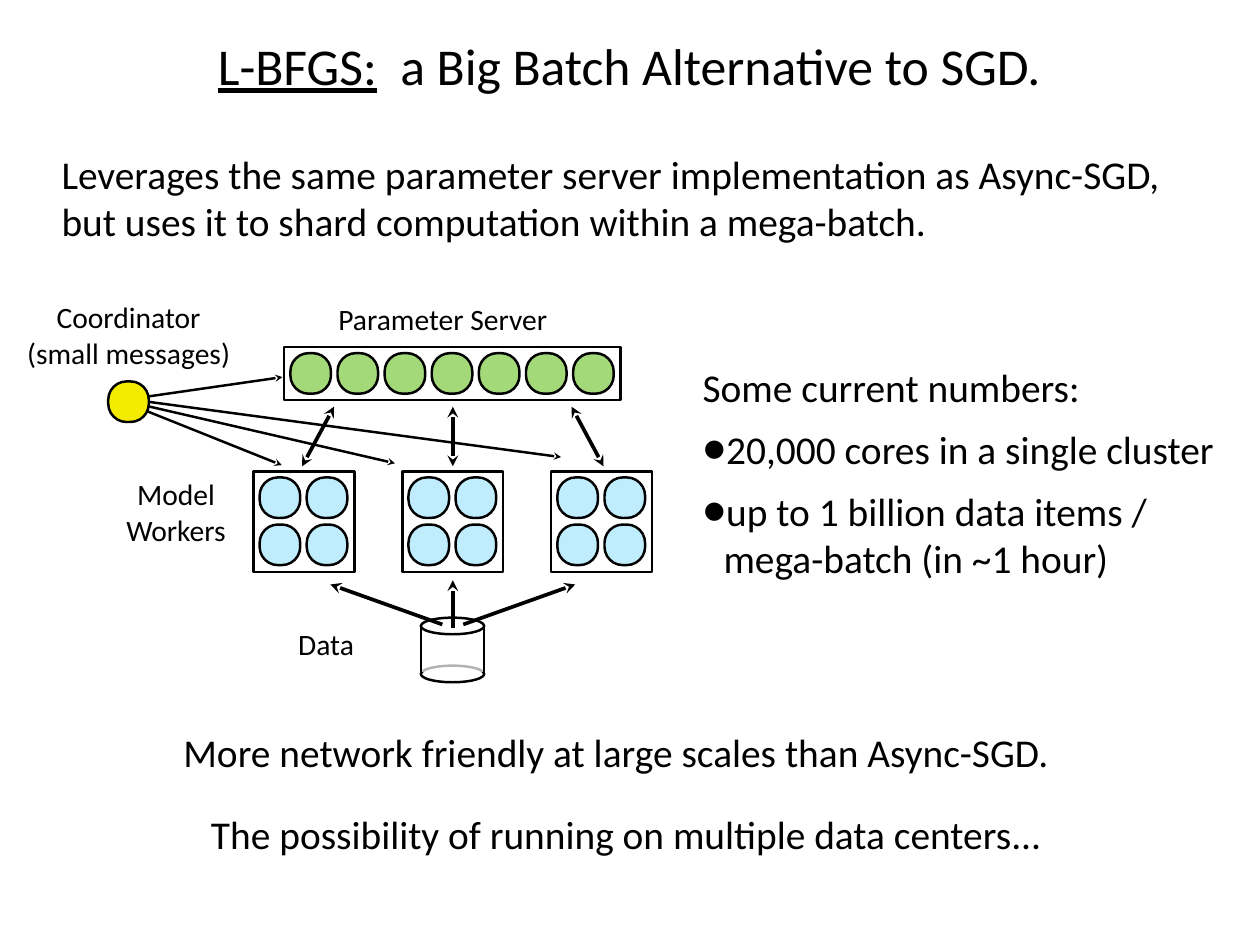
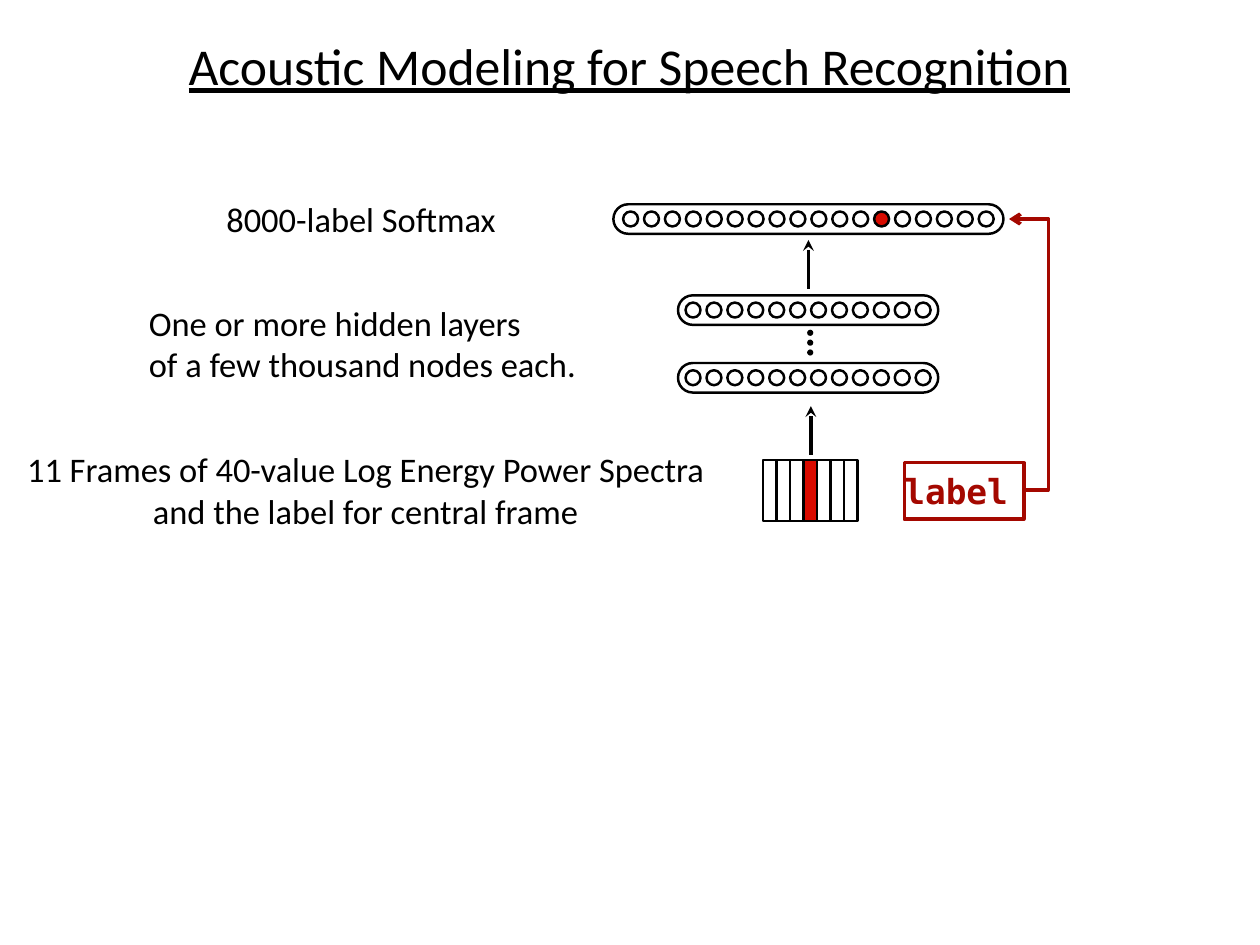
from dataclasses import dataclass
from itertools import product
from typing import NamedTuple, Optional, Sequence

from lxml.etree import SubElement
from pptx import Presentation
from pptx.dml.color import RGBColor
from pptx.enum.shapes import MSO_CONNECTOR, MSO_SHAPE
from pptx.enum.text import MSO_ANCHOR, MSO_AUTO_SIZE, PP_ALIGN
from pptx.oxml.ns import qn
from pptx.shapes.autoshape import Shape
from pptx.slide import Slide
from pptx.text.text import TextFrame
from pptx.util import Pt


@dataclass(frozen=True)
class Theme:
    font: str = "Calibri"
    code_font: str = "DejaVu Sans Mono"
    black: str = "000000"
    white: str = "FFFFFF"
    worker: str = "C0EDFE"
    server: str = "A3D979"
    coordinator: str = "F3EB00"
    active: str = "D90B00"
    label: str = "A40800"
    title_size: float = 42
    body_size: float = 32
    note_size: float = 28
    caption_size: float = 24
    thin: float = 2
    thick: float = 3


class Box(NamedTuple):
    left: float
    top: float
    width: float
    height: float


class Arrow(NamedTuple):
    start: tuple[float, float]
    end: tuple[float, float]
    width: float = 3
    head: Optional[str] = "stealth"
    tail: Optional[str] = None


class Caption(NamedTuple):
    box: Box
    lines: Sequence[str]
    size: float
    align: PP_ALIGN = PP_ALIGN.LEFT
    before: float = 0


class Layer(NamedTuple):
    box: Box
    nodes: int
    active: Optional[int] = None


THEME = Theme()
CELL = 33
CELL_PITCH = 38.3
CELL_INSET = 5
NODE = 12.2
NODE_PITCH = 17
CENTER = 368


def write_text(frame: TextFrame, lines: Sequence[str], *, size: float, font: str = THEME.font,
               color: str = THEME.black, align: PP_ALIGN = PP_ALIGN.LEFT, bold: bool = False,
               before: float = 0, underlined: str = "") -> None:
    frame.auto_size = MSO_AUTO_SIZE.NONE
    frame.word_wrap = True
    frame.vertical_anchor = MSO_ANCHOR.MIDDLE
    frame.margin_left = frame.margin_right = frame.margin_top = frame.margin_bottom = 0
    for index, line in enumerate(lines):
        paragraph = frame.paragraphs[0] if index == 0 else frame.add_paragraph()
        paragraph.alignment = align
        paragraph.space_before = Pt(before)
        for text, underline in ((underlined, True), (line, False)):
            if text:
                run = paragraph.add_run()
                run.text = text
                run.font.name = font
                run.font.size = Pt(size)
                run.font.bold = bold
                run.font.underline = underline
                run.font.color.rgb = RGBColor.from_string(color)


def place(shape: Shape, box: Box) -> None:
    shape.left, shape.top, shape.width, shape.height = map(Pt, box)


def add_title(slide: Slide, underlined: str, rest: str = "") -> None:
    title = slide.shapes.title
    place(title, Box(7, 24, 1009, 57))
    write_text(title.text_frame, [rest], size=THEME.title_size, align=PP_ALIGN.CENTER,
               underlined=underlined)


def add_caption(slide: Slide, caption: Caption) -> None:
    text_box = slide.shapes.add_textbox(*map(Pt, caption.box))
    write_text(text_box.text_frame, caption.lines, size=caption.size, align=caption.align,
               before=caption.before)


def style_line(shape: Shape, color: str, width: float) -> None:
    shape.line.color.rgb = RGBColor.from_string(color)
    shape.line.width = Pt(width)


def add_ends(shape: Shape, head: Optional[str], tail: Optional[str]) -> None:
    line = shape.line._get_or_add_ln()
    for tag, kind in (("a:headEnd", head), ("a:tailEnd", tail)):
        if kind:
            SubElement(line, qn(tag), type=kind)


def add_figure(slide: Slide, kind: MSO_SHAPE, box: Box, *, fill: Optional[str] = None,
               line: Optional[str] = THEME.black, width: float = THEME.thin,
               corner: Optional[float] = None, opacity: Optional[int] = None) -> Shape:
    shape = slide.shapes.add_shape(kind, *map(Pt, box))
    shape.shadow.inherit = False
    if corner is not None:
        shape.adjustments[0] = corner
    if fill:
        shape.fill.solid()
        shape.fill.fore_color.rgb = RGBColor.from_string(fill)
    else:
        shape.fill.background()
    if opacity is not None:
        color = shape._element.spPr.find(f".//{qn('a:srgbClr')}")
        SubElement(color, qn("a:alpha"), val=str(opacity * 1000))
    if line:
        style_line(shape, line, width)
    else:
        shape.line.fill.background()
    return shape


def add_arrow(slide: Slide, arrow: Arrow) -> None:
    connector = slide.shapes.add_connector(
        MSO_CONNECTOR.STRAIGHT, *map(Pt, (*arrow.start, *arrow.end)))
    style_line(connector, THEME.black, arrow.width)
    add_ends(connector, arrow.head, arrow.tail)
    SubElement(connector._element.spPr, qn("a:effectLst"))


def add_cell(slide: Slide, left: float, top: float, fill: str) -> None:
    add_figure(slide, MSO_SHAPE.ROUNDED_RECTANGLE, Box(left, top, CELL, CELL),
               fill=fill, corner=0.452)


def add_cell_grid(slide: Slide, box: Box, rows: int, columns: int, fill: str) -> None:
    for row, column in product(range(rows), range(columns)):
        add_cell(slide, box.left + CELL_INSET + column * CELL_PITCH,
                 box.top + CELL_INSET + row * CELL_PITCH, fill)
    add_figure(slide, MSO_SHAPE.RECTANGLE, box)


def add_numbers(slide: Slide) -> None:
    body = slide.placeholders[1]
    place(body, Box(571, 229, 430, 310))
    write_text(body.text_frame, [
        "Some current numbers:",
        "20,000 cores in a single cluster",
        "up to 1 billion data items / mega-batch (in ~1 hour)",
    ], size=THEME.body_size, before=12)
    for index, paragraph in enumerate(body.text_frame.paragraphs):
        properties = paragraph._p.get_or_add_pPr()
        indent = Pt(17) if index else 0
        properties.set("marL", str(indent))
        properties.set("indent", str(-indent))
        if index:
            SubElement(properties, qn("a:buSzPct"), val="171000")
            SubElement(properties, qn("a:buChar"), char="•")
        else:
            SubElement(properties, qn("a:buNone"))


def add_data_store(slide: Slide) -> None:
    left, width, rim = 342, 51.5, 13.5
    add_figure(slide, MSO_SHAPE.OVAL, Box(left, 541, width, rim))
    add_figure(slide, MSO_SHAPE.RECTANGLE, Box(left, 510, width, 36),
               fill=THEME.white, line=None, opacity=70)
    add_figure(slide, MSO_SHAPE.OVAL, Box(left, 502, width, rim))
    for side in (left, left + width):
        add_arrow(slide, Arrow((side, 509), (side, 548), THEME.thin, None))


def build_batch_slide(slide: Slide) -> None:
    add_title(slide, "L-BFGS:", "  a Big Batch Alternative to SGD.")
    add_numbers(slide)
    center = PP_ALIGN.CENTER
    captions = [
        Caption(Box(50, 96, 915, 129), [
            "Leverages the same parameter server implementation as Async-SGD, "
            "but uses it to shard computation within a mega-batch."],
            THEME.body_size, before=12),
        Caption(Box(149, 589, 730, 44),
                ["More network friendly at large scales than Async-SGD."],
                THEME.body_size, before=12),
        Caption(Box(171.5, 656, 700, 44),
                ["The possibility of running on multiple data centers..."],
                THEME.body_size, before=12),
        Caption(Box(275, 241, 190, 36), ["Parameter Server"], THEME.caption_size),
        Caption(Box(91, 384, 104, 64), ["Model", "Workers"], THEME.caption_size, center),
        Caption(Box(184, 505, 162, 36), ["Data"], THEME.caption_size, center),
        Caption(Box(14, 240, 181, 64), ["Coordinator", "(small messages)"],
                THEME.caption_size, center),
    ]
    for caption in captions:
        add_caption(slide, caption)

    for worker in range(3):
        add_cell_grid(slide, Box(206 + worker * 121, 383, 82, 82), 2, 2, THEME.worker)
    add_cell_grid(slide, Box(231, 282, 273.5, 43), 1, 7, THEME.server)
    add_data_store(slide)

    for side in (-1, 0, 1):
        add_arrow(slide, Arrow((CENTER + side * 96.5, 330.5), (CENTER + side * 122.5, 379),
                               tail="stealth"))
        add_arrow(slide, Arrow((CENTER + side * 99.5, 475 if side else 471.5),
                               (CENTER + side * 8.5, 507.5 if side else 510)))
    messages = [
        ((229, 378), (114, 332)),
        ((321, 376.5), (111, 328)),
        ((456, 371.5), (116.5, 326)),
        ((229.5, 306.5), (115, 323)),
    ]
    for target, source in messages:
        add_arrow(slide, Arrow(target, source, THEME.thin))
    add_cell(slide, 88, 310, THEME.coordinator)


def add_layer(slide: Slide, layer: Layer) -> None:
    box = layer.box
    add_figure(slide, MSO_SHAPE.ROUNDED_RECTANGLE, box, corner=0.5)
    span = (layer.nodes - 1) * NODE_PITCH + NODE
    first = box.left + (box.width - span) / 2
    top = box.top + (box.height - NODE) / 2
    for index in range(layer.nodes):
        add_figure(slide, MSO_SHAPE.OVAL, Box(first + index * NODE_PITCH, top, NODE, NODE),
                   fill=THEME.active if index == layer.active else None)


def add_frames(slide: Slide) -> None:
    box, step, count = Box(620, 374, 77, 49.5), 11, 7
    add_figure(slide, MSO_SHAPE.RECTANGLE,
               Box(box.left + count // 2 * step, box.top, step, box.height),
               fill=THEME.active, line=None)
    add_figure(slide, MSO_SHAPE.RECTANGLE, box)
    for index in range(1, count):
        x = box.left + index * step
        add_arrow(slide, Arrow((x, box.top), (x, box.top + box.height), THEME.thin, None))


def add_label(slide: Slide) -> None:
    label = add_figure(slide, MSO_SHAPE.RECTANGLE, Box(735, 376, 97, 46),
                       line=THEME.label, width=THEME.thick)
    write_text(label.text_frame, ["label"], size=THEME.note_size, font=THEME.code_font,
               color=THEME.label, bold=True)
    builder = slide.shapes.build_freeform(Pt(831), Pt(398))
    corners = [(852, 398), (852, 178), (820, 178)]
    builder.add_line_segments([(Pt(x), Pt(y)) for x, y in corners], close=False)
    feedback = builder.convert_to_shape()
    feedback.shadow.inherit = False
    feedback.fill.background()
    style_line(feedback, THEME.label, THEME.thick)
    add_ends(feedback, None, "arrow")


def build_speech_slide(slide: Slide) -> None:
    add_title(slide, "Acoustic Modeling for Speech Recognition")
    captions = [
        Caption(Box(184, 158, 240, 40), ["8000-label Softmax"], THEME.note_size),
        Caption(Box(121, 243, 365, 72),
                ["One or more hidden layers", "of a few thousand nodes each."], THEME.note_size),
        Caption(Box(17, 362, 560, 72),
                ["11 Frames of 40-value Log Energy Power Spectra and the label for central frame"],
                THEME.note_size, PP_ALIGN.CENTER),
    ]
    for caption in captions:
        add_caption(slide, caption)
    layers = [
        Layer(Box(498.5, 166, 317, 24), 18, 12),
        Layer(Box(551, 240, 211.5, 24), 12),
        Layer(Box(551, 295, 211.5, 24), 12),
    ]
    for layer in layers:
        add_layer(slide, layer)
    for index in range(3):
        add_figure(slide, MSO_SHAPE.OVAL, Box(656, 268 + index * 8, 5, 5),
                   fill=THEME.black, line=None)
    add_frames(slide)
    add_label(slide)
    add_arrow(slide, Arrow((657, 195), (657, 235)))
    add_arrow(slide, Arrow((659, 330), (659, 370)))


def main() -> None:
    presentation = Presentation()
    presentation.slide_width, presentation.slide_height = Pt(1024), Pt(768)
    layouts = presentation.slide_layouts
    build_batch_slide(presentation.slides.add_slide(layouts.get_by_name("Title and Content")))
    build_speech_slide(presentation.slides.add_slide(layouts.get_by_name("Title Only")))
    presentation.save("out.pptx")


if __name__ == "__main__":
    main()
